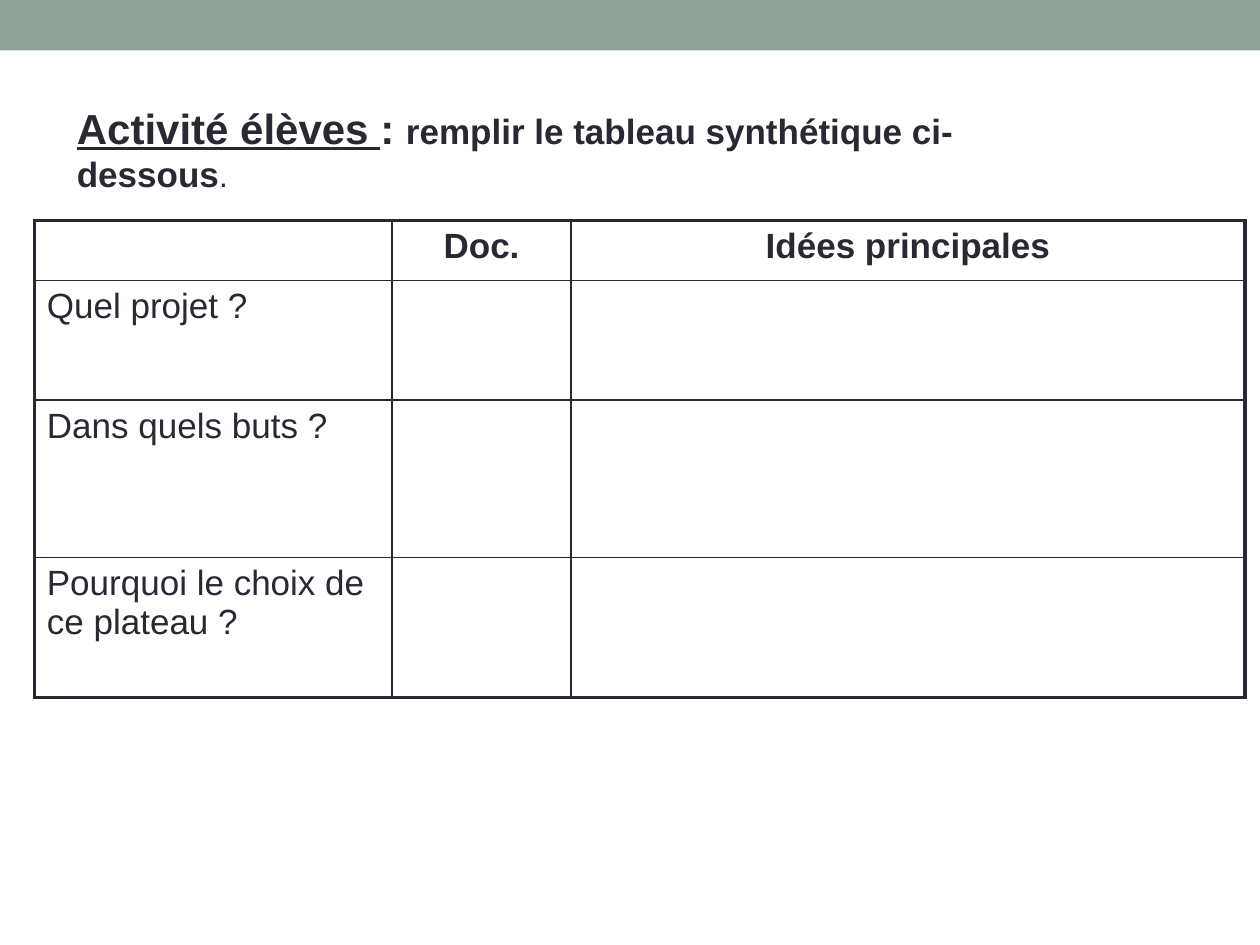
import pptx
import pptx.util
import pptx.dml.color
import pptx.enum.shapes
import pptx.enum.text
import pptx.oxml
import pptx.oxml.ns

Pt = pptx.util.Pt
RGBColor = pptx.dml.color.RGBColor
Align = pptx.enum.text.PP_ALIGN

INK = RGBColor(0x29, 0x29, 0x34)
SAGE = RGBColor(0x93, 0xA2, 0x99)
FONT = "Arial"
THICK, THIN = 2.25, 1

TITLE = [
    ("Activité élèves ", 24, True, True),
    (": ", 24, True, False),
    ("remplir le tableau synthétique ci-dessous", 20, True, False),
    (".", 18, False, False),
]
ROWS = [
    ("", "Doc.", "Idées principales"),
    ("Quel projet ?", "", ""),
    ("Dans quels buts ?", "", ""),
    ("Pourquoi le choix de ce plateau ?", "", ""),
]
COL_WIDTHS = [204.5, 102.2, 385.2]
ROW_HEIGHTS = [34.2, 68.4, 90, 79.9]


def format_run(r, size, bold, underline=False):
    r.font.name = FONT
    r.font.size = Pt(size)
    r.font.bold = bold
    r.font.underline = underline
    r.font.color.rgb = INK


def add_border(cell, side, width):
    ln = pptx.oxml.parse_xml(
        f'<a:{side} {pptx.oxml.ns.nsdecls("a")} w="{Pt(width)}">'
        f'<a:solidFill><a:srgbClr val="{INK}"/></a:solidFill></a:{side}>'
    )
    cell._tc.get_or_add_tcPr().append(ln)


def add_band(s):
    sp = s.shapes.add_shape(
        pptx.enum.shapes.MSO_SHAPE.RECTANGLE, 0, 0, Pt(720), Pt(28.8))
    sp.shadow.inherit = False
    sp.fill.solid()
    sp.fill.fore_color.rgb = SAGE
    sp.line.fill.background()


def fill_title(sp):
    sp.left, sp.top, sp.width, sp.height = Pt(36.7), Pt(54.7), Pt(601.2), Pt(36)
    tf = sp.text_frame
    tf.word_wrap = True
    tf.auto_size = pptx.enum.text.MSO_AUTO_SIZE.SHAPE_TO_FIT_TEXT
    tf.vertical_anchor = pptx.enum.text.MSO_ANCHOR.TOP
    p = tf.paragraphs[0]
    p.alignment = Align.LEFT
    for text, size, bold, underline in TITLE:
        r = p.add_run()
        r.text = text
        format_run(r, size, bold, underline)


def add_grid(s):
    frame = s.shapes.add_table(
        len(ROWS), len(COL_WIDTHS), Pt(19.6), Pt(126),
        Pt(sum(COL_WIDTHS)), Pt(sum(ROW_HEIGHTS)))
    table = frame.table
    table.first_row = table.horz_banding = False
    for column, width in zip(table.columns, COL_WIDTHS):
        column.width = Pt(width)
    for row, height in zip(table.rows, ROW_HEIGHTS):
        row.height = Pt(height)
    last_row, last_col = len(ROWS) - 1, len(COL_WIDTHS) - 1
    for i, texts in enumerate(ROWS):
        for j, text in enumerate(texts):
            cell = table.cell(i, j)
            outer = {"lnL": j == 0, "lnR": j == last_col,
                     "lnT": i == 0, "lnB": i == last_row}
            for side, is_outer in outer.items():
                add_border(cell, side, THICK if is_outer else THIN)
            cell.fill.background()
            if text:
                p = cell.text_frame.paragraphs[0]
                p.text = text
                p.space_before = Pt(4)
                p.alignment = Align.CENTER if i == 0 else Align.LEFT
                format_run(p.runs[0], 20, i == 0)


def main():
    prs = pptx.Presentation()
    prs.slide_width, prs.slide_height = Pt(720), Pt(540)
    s = prs.slides.add_slide(prs.slide_layouts[5])
    add_band(s)
    add_grid(s)
    fill_title(s.shapes.title)
    prs.save("out.pptx")


if __name__ == "__main__":
    main()
